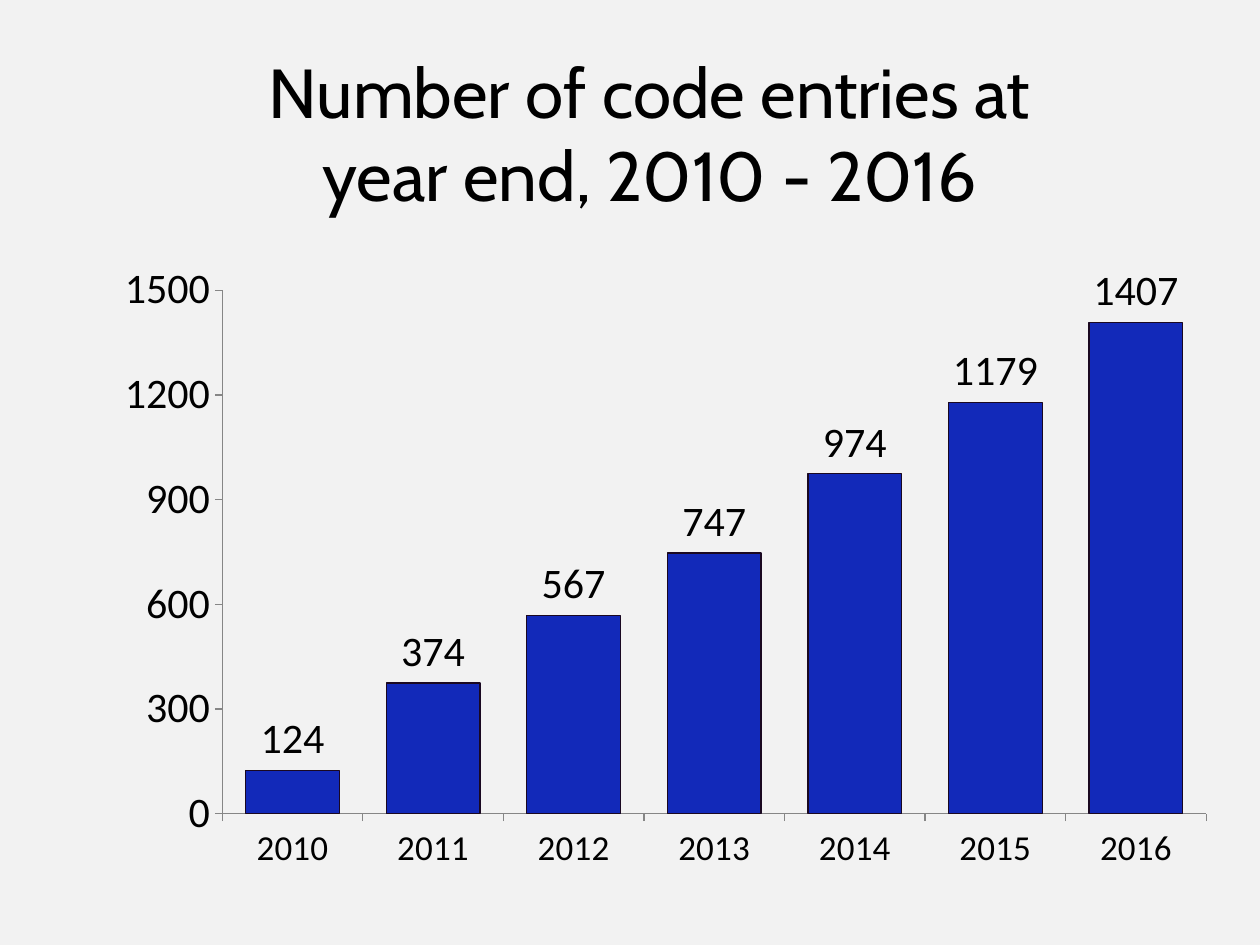
"""Build a slide with a column chart of code entries at each year end."""
import pptx
import pptx.chart.data
import pptx.dml.color
import pptx.enum.chart
import pptx.enum.text
import pptx.util

Cm = pptx.util.Cm
Pt = pptx.util.Pt
RGBColor = pptx.dml.color.RGBColor

TITLE = "Number of code entries at\vyear end, 2010 - 2016"
FIRST_YEAR = 2010
ENTRIES = [124, 374, 567, 747, 974, 1179, 1407]

BACKGROUND = RGBColor(0xF2, 0xF2, 0xF2)
BLACK = RGBColor(0, 0, 0)
BAR_FILL = RGBColor(0x12, 0x29, 0xB9)
BAR_LINE = RGBColor(0x1A, 0x08, 0x21)
AXIS_LINE = RGBColor(0x86, 0x86, 0x86)

TITLE_BOX = {"left": Cm(2.06), "top": Cm(1.07), "width": Cm(22.07), "height": Cm(3.18)}
CHART_BOX = (Cm(2.06), Cm(5.08), Cm(22.71), Cm(12.7))
TITLE_FONT = {"name": "Cabin", "size": Pt(39.6), "bold": False}
CHART_FONT = {"name": "Calibri", "size": Pt(24), "bold": False}
YEAR_FONT = {**CHART_FONT, "size": Pt(20)}
VALUE_SCALE = {"minimum_scale": 0, "maximum_scale": 1500, "major_unit": 300}
AXIS_STYLE = {
    "has_major_gridlines": False,
    "major_tick_mark": pptx.enum.chart.XL_TICK_MARK.OUTSIDE,
    "minor_tick_mark": pptx.enum.chart.XL_TICK_MARK.NONE,
}
LABEL_STYLE = {
    "show_value": True,
    "position": pptx.enum.chart.XL_LABEL_POSITION.OUTSIDE_END,
    "number_format": "0",
    "number_format_is_linked": False,
}


def apply(target, values):
    for name, value in values.items():
        setattr(target, name, value)


def format_font(font, values):
    apply(font, values)
    font.color.rgb = BLACK


def add_title(slide):
    title = slide.shapes.title
    apply(title, TITLE_BOX)
    frame = title.text_frame
    apply(frame, {
        "text": TITLE,
        "word_wrap": True,
        "auto_size": pptx.enum.text.MSO_AUTO_SIZE.NONE,
        "vertical_anchor": pptx.enum.text.MSO_ANCHOR.MIDDLE,
    })
    paragraph = frame.paragraphs[0]
    paragraph.alignment = pptx.enum.text.PP_ALIGN.CENTER
    for run in paragraph.runs:
        format_font(run.font, TITLE_FONT)


def add_entries_chart(slide):
    data = pptx.chart.data.CategoryChartData()
    data.categories = [str(FIRST_YEAR + index) for index in range(len(ENTRIES))]
    data.add_series("Series 1", ENTRIES)
    chart = slide.shapes.add_chart(
        pptx.enum.chart.XL_CHART_TYPE.COLUMN_CLUSTERED, *CHART_BOX, data
    ).chart
    apply(chart, {"has_legend": False, "has_title": False})
    format_font(chart.font, CHART_FONT)

    for axis, font in ((chart.category_axis, YEAR_FONT), (chart.value_axis, CHART_FONT)):
        apply(axis, AXIS_STYLE)
        format_font(axis.tick_labels.font, font)
        axis.format.line.color.rgb = AXIS_LINE
        axis.format.line.width = Pt(0.75)
    apply(chart.value_axis, VALUE_SCALE)

    plot = chart.plots[0]
    apply(plot, {"gap_width": 50, "vary_by_categories": False, "has_data_labels": True})
    apply(plot.data_labels, LABEL_STYLE)
    format_font(plot.data_labels.font, CHART_FONT)

    bars = plot.series[0].format
    bars.fill.solid()
    bars.fill.fore_color.rgb = BAR_FILL
    bars.line.color.rgb = BAR_LINE
    bars.line.width = Pt(0.75)


def main():
    presentation = pptx.Presentation()
    apply(presentation, {"slide_width": Cm(25.4), "slide_height": Cm(19.05)})
    slide = presentation.slides.add_slide(presentation.slide_layouts[5])
    slide.background.fill.solid()
    slide.background.fill.fore_color.rgb = BACKGROUND
    add_title(slide)
    add_entries_chart(slide)
    presentation.save("out.pptx")


if __name__ == "__main__":
    main()
